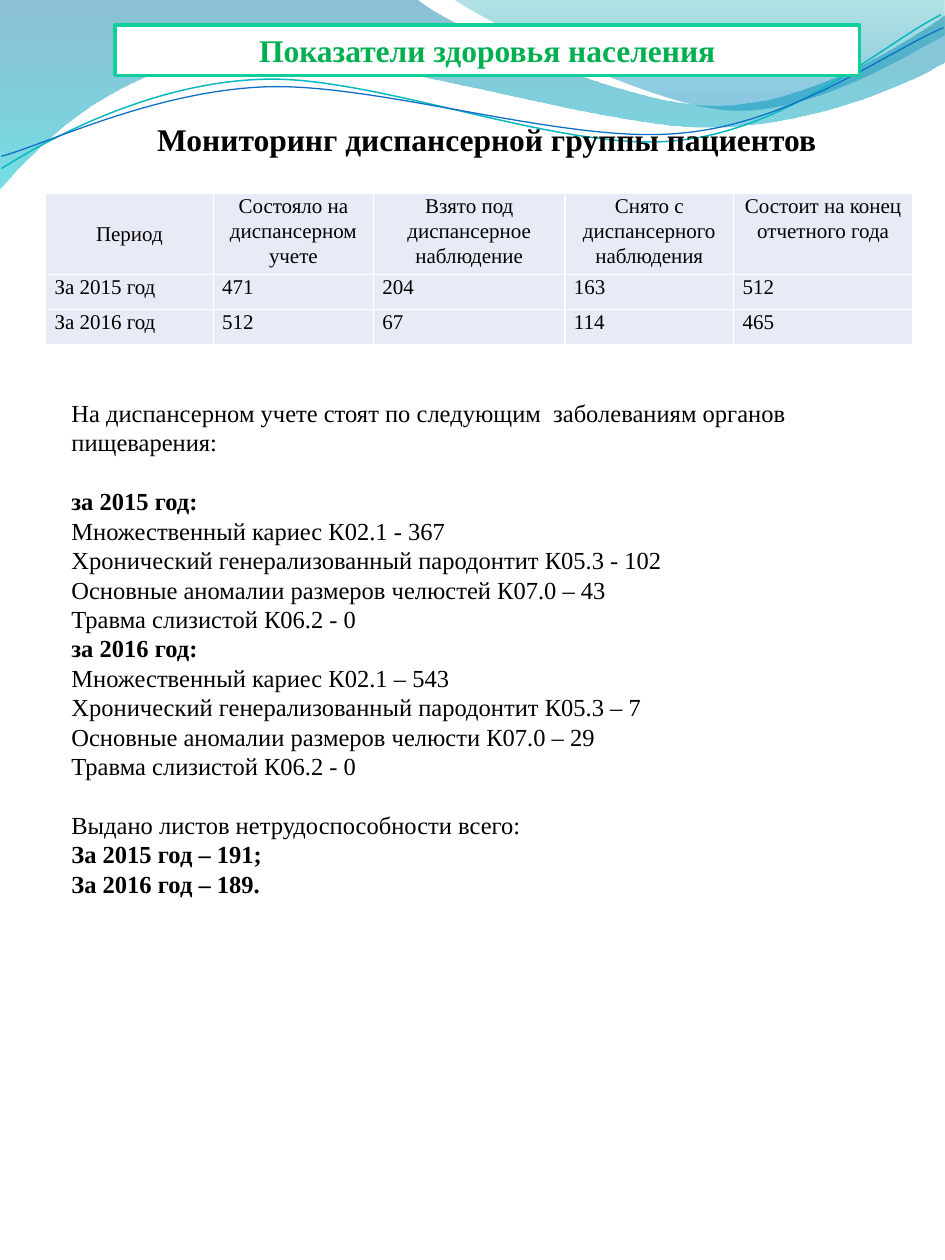
from dataclasses import dataclass
from typing import NamedTuple

from lxml import etree
from pptx import Presentation
from pptx.dml.color import RGBColor
from pptx.enum import shapes, text
from pptx.oxml import ns
from pptx.util import Cm, Pt

FONT = "Times New Roman"
BLACK, WHITE, GREEN, MINT, CELL = "000000", "FFFFFF", "00B050", "10CF9B", "E7EBF5"


class Stop(NamedTuple):
    position: float
    colour: str
    opacity: int


class Line(NamedTuple):
    text: str
    bold: bool = False
    gap: float = 0


@dataclass
class Wave:
    """A start point, then segments: 2 numbers for a line, 6 for a Bezier curve (cm)."""
    start: tuple
    segments: list
    stops: tuple = ()
    line: str = ""
    width: float = 0


WAVES = [
    Wave((0, -0.03), [
        (8.38, -0.03),
        (9.07, 0.56, 12.65, 2.13, 14.45, 2.13),
        (16.26, 2.13, 18.26, 0.86, 19.05, 0.3),
        (19.08, 1.22),
        (18.75, 1.47, 16.56, 2.57, 14.2, 2.57),
        (11.84, 2.54, 7.26, 0.94, 4.9, 1.14),
        (2.46, 1.19, 0.86, 2.82, -0.03, 3.84),
        (0, -0.03),
    ], stops=(Stop(0, "0074A1", 45), Stop(1, "00C6CF", 55))),
    Wave((9.12, -0.03), [
        (9.7, 0.38, 12.98, 2.08, 14.66, 2.21),
        (16.31, 2.34, 18.31, 1.09, 19.05, 0.71),
        (19.05, 0),
        (9.12, -0.03),
    ], stops=(Stop(0, "00A1A9", 30), Stop(0.8, "008BBF", 45))),
    Wave((0.03, 3.4), [
        (0.91, 2.84, 3, 1.68, 5.26, 1.6),
        (7.52, 1.5, 11.3, 3.07, 13.59, 2.84),
        (15.9, 2.64, 17.86, 0.84, 18.97, 0.3),
    ], line="0AB8BF", width=0.85),
    Wave((0.03, 3.15), [
        (0.91, 2.92, 3.1, 1.83, 5.38, 1.75),
        (7.67, 1.68, 11.4, 2.9, 13.67, 2.69),
        (15.95, 2.51, 17.91, 1.02, 19.02, 0.56),
    ], line="0F6FC6", width=0.75),
]

COLUMNS = [3.38, 3.23, 3.86, 3.4, 3.61]
ROWS = [1.63, 0.71, 0.71]
TABLE = [
    ["Период", "Состояло на диспансерном учете", "Взято под диспансерное наблюдение",
     "Снято с диспансерного наблюдения", "Состоит на конец отчетного года"],
    ["За 2015 год", "471", "204", "163", "512"],
    ["За 2016 год", "512", "67", "114", "465"],
]

BLANK_LINE = 16.8
BODY = [
    Line("На диспансерном учете стоят по следующим  заболеваниям органов пищеварения:"),
    Line("за 2015 год:", True, BLANK_LINE),
    Line("Множественный кариес К02.1 - 367"),
    Line("Хронический генерализованный пародонтит К05.3 - 102"),
    Line("Основные аномалии размеров челюстей К07.0 – 43"),
    Line("Травма слизистой К06.2 - 0"),
    Line("за 2016 год:", True),
    Line("Множественный кариес К02.1 – 543"),
    Line("Хронический генерализованный пародонтит К05.3 – 7"),
    Line("Основные аномалии размеров челюсти К07.0 – 29"),
    Line("Травма слизистой К06.2 - 0"),
    Line("Выдано листов нетрудоспособности всего:", gap=BLANK_LINE),
    Line("За 2015 год – 191;", True),
    Line("За 2016 год – 189.", True),
]


def rgb(colour: str) -> RGBColor:
    return RGBColor.from_string(colour)


def bend(sp, segments: list) -> None:
    """Turn each three lines that stand for a curve into one Bezier segment."""
    lines = iter(sp._element.xpath(".//a:path/a:lnTo"))
    for segment in segments:
        first = next(lines)
        if len(segment) == 6:
            first.tag = ns.qn("a:cubicBezTo")
            for line in (next(lines), next(lines)):
                first.append(line[0])
                line.getparent().remove(line)


def draw_wave(s, wave: Wave) -> None:
    points = [(Cm(x), Cm(y)) for segment in wave.segments
              for x, y in zip(segment[::2], segment[1::2])]
    builder = s.shapes.build_freeform(*map(Cm, wave.start))
    builder.add_line_segments(points, close=bool(wave.stops))
    sp = builder.convert_to_shape()
    bend(sp, wave.segments)
    sp.shadow.inherit = False
    if not wave.stops:
        sp.fill.background()
        sp.line.color.rgb = rgb(wave.line)
        sp.line.width = Pt(wave.width)
        return
    sp.line.fill.background()
    sp.fill.gradient()
    sp.fill.gradient_angle = 270
    for target, stop in zip(sp.fill.gradient_stops, wave.stops):
        target.position = stop.position
        target.color.rgb = rgb(stop.colour)
    for node, stop in zip(sp._element.xpath(".//a:gs/a:srgbClr"), wave.stops):
        etree.SubElement(node, ns.qn("a:alpha"), val=str(stop.opacity * 1000))


def write(tf, lines: list, size: float, colour: str = BLACK, align=None) -> None:
    tf.word_wrap = True
    for i, line in enumerate(lines):
        p = tf.paragraphs[0] if i == 0 else tf.add_paragraph()
        p.text = line.text
        p.alignment = align
        p.font.name, p.font.size, p.font.bold = FONT, Pt(size), line.bold
        p.font.color.rgb = rgb(colour)
        if line.gap:
            p.space_before = Pt(line.gap)


def add_text(s, box: tuple, lines: list, size: float) -> None:
    sp = s.shapes.add_textbox(*map(Cm, box))
    write(sp.text_frame, lines, size)
    sp.text_frame.auto_size = text.MSO_AUTO_SIZE.SHAPE_TO_FIT_TEXT


def add_banner(s, box: tuple, title: str) -> None:
    sp = s.shapes.add_shape(shapes.MSO_SHAPE.RECTANGLE, *map(Cm, box))
    sp.shadow.inherit = False
    sp.fill.solid()
    sp.fill.fore_color.rgb = rgb(WHITE)
    sp.line.color.rgb = rgb(MINT)
    sp.line.width = Pt(2)
    write(sp.text_frame, [Line(title, True)], 18, GREEN, text.PP_ALIGN.CENTER)


def set_borders(cell, colour: str, width: float) -> None:
    tc_pr = cell._tc.get_or_add_tcPr()
    for side in ("lnL", "lnR", "lnT", "lnB"):
        ln = etree.SubElement(tc_pr, ns.qn(f"a:{side}"), w=str(Pt(width)))
        fill = etree.SubElement(ln, ns.qn("a:solidFill"))
        etree.SubElement(fill, ns.qn("a:srgbClr"), val=colour)


def add_table(s, left: float, top: float) -> None:
    frame = s.shapes.add_table(len(ROWS), len(COLUMNS), Cm(left), Cm(top),
                               Cm(sum(COLUMNS)), Cm(sum(ROWS)))
    table = frame.table
    table.first_row = table.horz_banding = False
    for column, width in zip(table.columns, COLUMNS):
        column.width = Cm(width)
    for r, (row, height) in enumerate(zip(TABLE, ROWS)):
        table.rows[r].height = Cm(height)
        for c, value in enumerate(row):
            cell = table.cell(r, c)
            cell.margin_left = cell.margin_right = Cm(0.18)
            cell.margin_top = cell.margin_bottom = 0
            set_borders(cell, WHITE, 1)
            cell.fill.solid()
            cell.fill.fore_color.rgb = rgb(CELL)
            write(cell.text_frame, [Line(value)], 12,
                  align=None if r else text.PP_ALIGN.CENTER)
            p = cell.text_frame.paragraphs[0]
            p.line_spacing = 1.07
            if r:
                p.space_after = Pt(8)
    table.cell(0, 0).vertical_anchor = text.MSO_ANCHOR.MIDDLE


def main() -> None:
    prs = Presentation()
    prs.slide_width, prs.slide_height = Cm(19.05), Cm(25.4)
    s = prs.slides.add_slide(prs.slide_layouts[6])
    for wave in WAVES:
        draw_wave(s, wave)
    add_banner(s, (2.32, 0.5, 15.01, 1.02), "Показатели здоровья населения")
    add_text(s, (2.92, 2.29, 14, 1.02),
             [Line("Мониторинг диспансерной группы пациентов", True)], 18)
    add_text(s, (1.19, 7.9, 17.2, 11.02), BODY, 14)
    add_table(s, 0.92, 3.9)
    prs.save("out.pptx")


if __name__ == "__main__":
    main()
